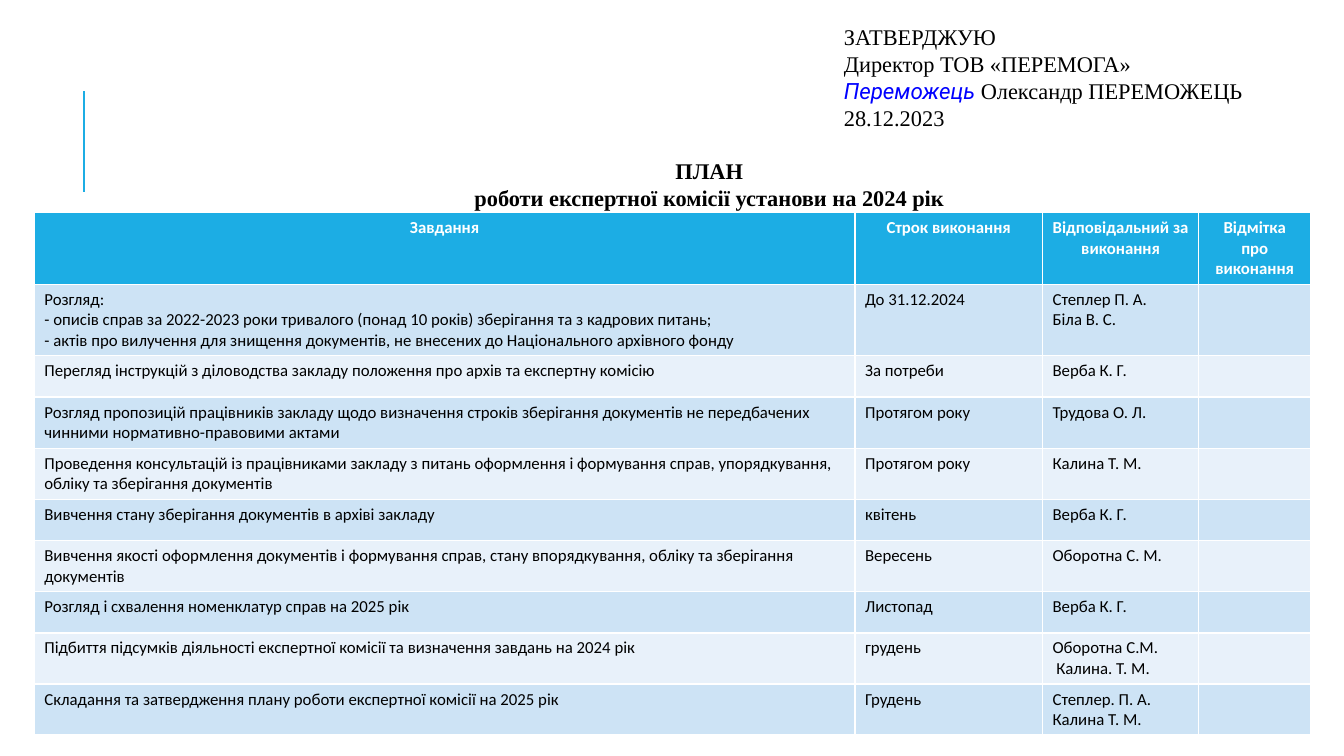
"""Build the slide with the 2024 work plan of the expert commission."""
from lxml.etree import SubElement
from pptx import Presentation
from pptx.dml.color import RGBColor
from pptx.enum.shapes import MSO_CONNECTOR
from pptx.enum.text import MSO_ANCHOR, MSO_AUTO_SIZE, PP_ALIGN
from pptx.oxml.ns import qn
from pptx.util import Inches, Pt

ACCENT, BLACK, WHITE, SIGNATURE = "1CADE4", "000000", "FFFFFF", "0000FF"
BANDS = ["CDE3F5", "E8F1FA"]
LINE_PITCH = Pt(19.2)
BODY_TOP, BODY_LEFT, BODY_WIDTH = Inches(0.18), Inches(0.98), Inches(12.11)
FRAME = dict(word_wrap=True, auto_size=MSO_AUTO_SIZE.NONE, vertical_anchor=MSO_ANCHOR.TOP,
             margin_left=Inches(0.05), margin_right=Inches(0.05),
             margin_top=Inches(0.05), margin_bottom=0)
SERIF = dict(name="Times New Roman", size=Pt(16), bold=False, italic=False)
HEADING = dict(SERIF, bold=True)
HANDWRITTEN = dict(SERIF, name="Roboto", italic=True)
CELL = dict(name="Calibri", size=Pt(12), bold=False)
HEADER_CELL = dict(CELL, bold=True)


def paint(target, color):
    target.rgb = RGBColor.from_string(color)


def apply(target, values, color=None):
    for attribute, value in values.items():
        setattr(target, attribute, value)
    if color:
        paint(target.color, color)


deck = Presentation()
deck.slide_width, deck.slide_height = Inches(13.33), Inches(7.5)
slide = deck.slides.add_slide(deck.slide_layouts[5])

accent_rule = slide.shapes.add_connector(
    MSO_CONNECTOR.STRAIGHT, Inches(0.83), Inches(1.9), Inches(0.83), Inches(0.9))
accent_rule.line.width = Pt(1.5)
paint(accent_rule.line.color, ACCENT)
SubElement(accent_rule._element.spPr, qn("a:effectLst"))

heading = slide.shapes.title
apply(heading, dict(left=BODY_LEFT, top=BODY_TOP + 5 * LINE_PITCH,
                    width=BODY_WIDTH, height=Inches(0.6)))
apply(heading.text_frame, FRAME)
heading.text_frame.text = "ПЛАН\nроботи експертної комісії установи на 2024 рік"
for paragraph in heading.text_frame.paragraphs:
    apply(paragraph, dict(alignment=PP_ALIGN.CENTER, line_spacing=LINE_PITCH, space_before=Pt(0)))
    apply(paragraph.runs[0].font, HEADING, BLACK)

approval_lines = [
    [("ЗАТВЕРДЖУЮ", SERIF, BLACK)],
    [("Директор ТОВ «ПЕРЕМОГА»", SERIF, BLACK)],
    [("Переможець", HANDWRITTEN, SIGNATURE), (" Олександр ПЕРЕМОЖЕЦЬ", SERIF, BLACK)],
    [("28.12.2023", SERIF, BLACK)],
]
approval = slide.shapes.add_textbox(Inches(8.32), BODY_TOP, Inches(4.77),
                                    5 * LINE_PITCH).text_frame
apply(approval, FRAME)
for index, pieces in enumerate(approval_lines):
    paragraph = approval.add_paragraph() if index else approval.paragraphs[0]
    paragraph.line_spacing = LINE_PITCH
    for text, font, color in pieces:
        run = paragraph.add_run()
        run.text = text
        apply(run.font, font, color)

plan_rows = [
    ("Завдання", "Строк виконання", "Відповідальний за виконання", "Відмітка про виконання"),
    ("Розгляд:\n"
     "- описів справ за 2022-2023 роки тривалого (понад 10 років) зберігання та з кадрових питань;\n"
     "- актів про вилучення для знищення документів, не внесених до Національного архівного фонду",
     "До 31.12.2024", "Степлер П. А.\nБіла В. С.", ""),
    ("Перегляд інструкцій з діловодства закладу положення про архів та експертну комісію",
     "За потреби", "Верба К. Г.", ""),
    ("Розгляд пропозицій працівників закладу щодо визначення строків зберігання документів "
     "не передбачених чинними нормативно-правовими актами",
     "Протягом року", "Трудова О. Л.", ""),
    ("Проведення консультацій із працівниками закладу з питань оформлення і формування справ, "
     "упорядкування, обліку та зберігання документів",
     "Протягом року", "Калина Т. М.", ""),
    ("Вивчення стану зберігання документів в архіві закладу", "квітень", "Верба К. Г.", ""),
    ("Вивчення якості оформлення документів і формування справ, стану впорядкування, "
     "обліку та зберігання документів",
     "Вересень", "Оборотна С. М.", ""),
    ("Розгляд і схвалення номенклатур справ на 2025 рік", "Листопад", "Верба К. Г.", ""),
    ("Підбиття підсумків діяльності експертної комісії та визначення завдань на 2024 рік",
     "грудень", "Оборотна С.М.\n Калина. Т. М.", ""),
    ("Складання та затвердження плану роботи експертної комісії на 2025 рік",
     "Грудень", "Степлер. П. А.\nКалина Т. М.", ""),
]
column_widths = [8.14, 1.86, 1.55, 1.11]
row_height = Inches(0.41)
plan = slide.shapes.add_table(
    len(plan_rows), len(column_widths), Inches(0.34), Inches(2.11),
    Inches(sum(column_widths)), row_height * len(plan_rows)).table
for column, width in zip(plan.columns, column_widths):
    column.width = Inches(width)
for row_index, entries in enumerate(plan_rows):
    plan.rows[row_index].height = row_height
    is_header = row_index == 0
    band = ACCENT if is_header else BANDS[(row_index - 1) % 2]
    for column_index, entry in enumerate(entries):
        cell = plan.cell(row_index, column_index)
        cell.fill.solid()
        paint(cell.fill.fore_color, band)
        cell.text = entry
        for paragraph in cell.text_frame.paragraphs:
            paragraph.alignment = PP_ALIGN.CENTER if is_header else PP_ALIGN.LEFT
            for run in paragraph.runs:
                apply(run.font, HEADER_CELL if is_header else CELL,
                      WHITE if is_header else BLACK)

deck.save("out.pptx")
